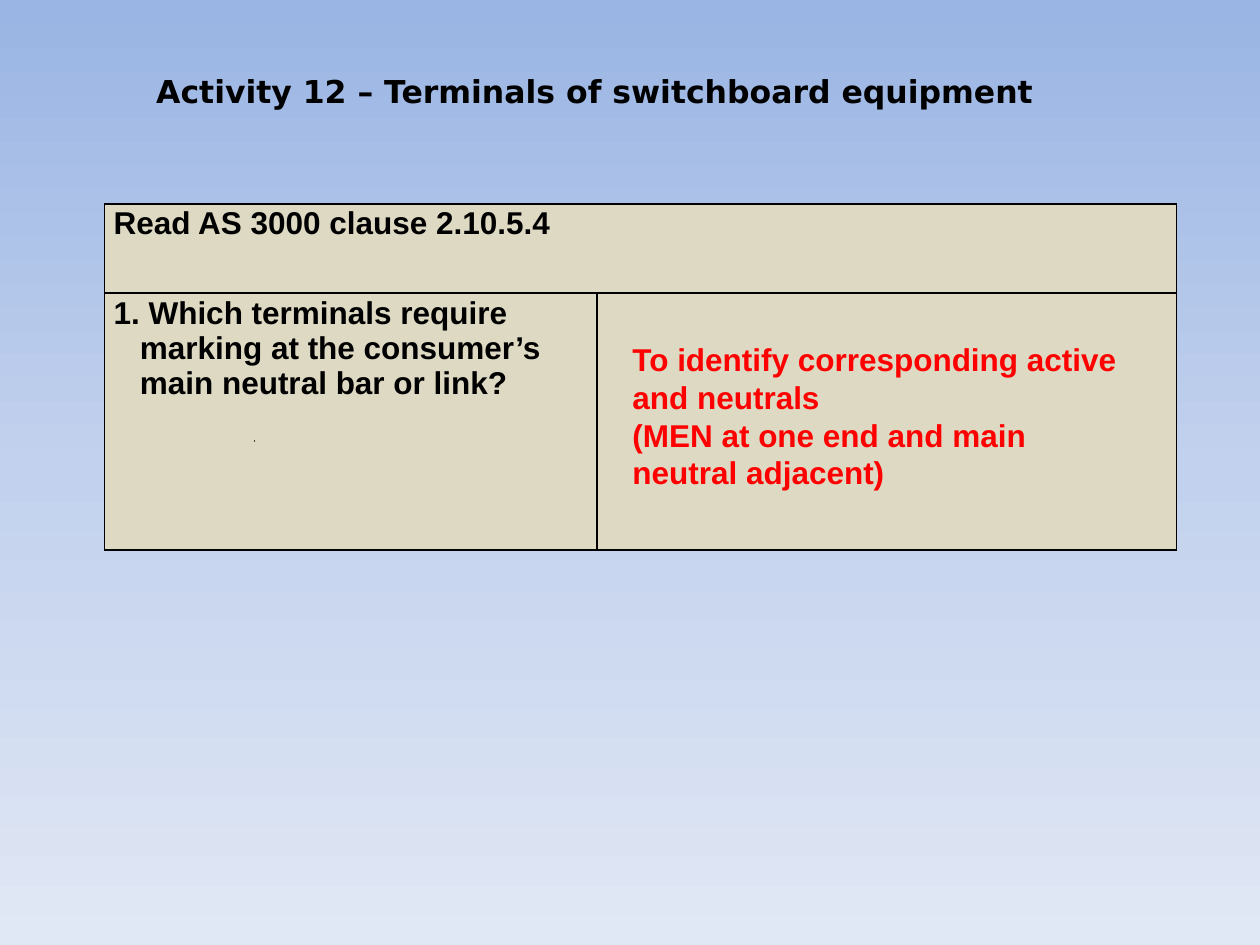
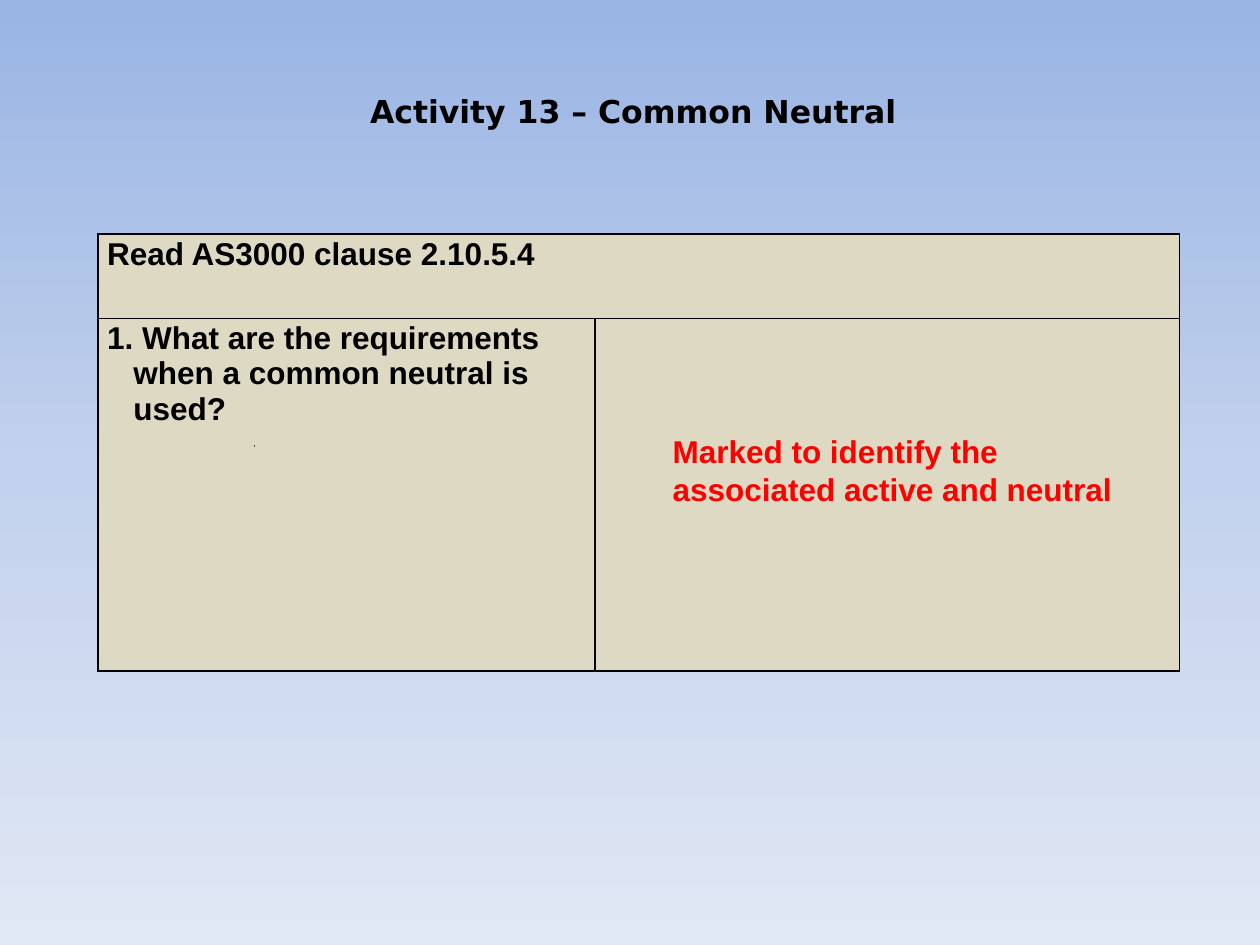
from copy import deepcopy

from pptx import Presentation
from pptx.dml.color import RGBColor
from pptx.enum.shapes import MSO_SHAPE
from pptx.oxml import parse_xml
from pptx.oxml.ns import nsdecls, qn
from pptx.util import Cm, Pt

BLACK, RED, BLUE, SAND = "000000", "FF0000", "4F81BD", "DDD9C3"
BACKGROUND_STOPS = [(0, "9AB5E4"), (0.5, "C2D1ED"), (1, "E1E8F5")]
TITLE_FONT, BODY_FONT = "DejaVu Sans", "Arial"
TEXT_SIZE = Pt(18)
HANGING_INDENT = Cm(0.53)

# Boxes are left, top, width, height in centimetres
ACTIVITIES = [
    {
        "title": "Activity 12 – Terminals of switchboard equipment",
        "title_box": (2.9, 1.32, 19.99, 1.02),
        "wrap_title": True,
        "reading": "Read AS 3000 clause 2.10.5.4",
        "question": "1. Which terminals require marking at the consumer’s "
                    "main neutral bar or link?",
        "table_box": (2.11, 4.11, 21.61, 6.98),
        "reading_height": 1.8,
        "marker_position": (5.13, 8.89),
        "answers": ["To identify corresponding active and neutrals",
                    "(MEN at one end and main neutral adjacent)"],
        "answer_box": (12.5, 6.73, 10.39, 3.33),
    },
    {
        "title": "Activity 13 – Common Neutral",
        "title_box": (7.21, 1.73, 11.33, 1.02),
        "wrap_title": False,
        "reading": "Read AS3000 clause 2.10.5.4",
        "question": "1. What are the requirements when a common neutral is used?",
        "table_box": (1.98, 4.72, 21.8, 8.81),
        "reading_height": 1.7,
        "marker_position": (5.13, 8.99),
        "answers": ["Marked to identify the associated active and neutral"],
        "answer_box": (13.31, 8.59, 9.6, 1.8),
    },
]
QUESTION_SHARE = 0.4594  # question column as a share of the table width


def color(hex_string):
    return RGBColor.from_string(hex_string)


def write(text_frame, lines, font_name, hex_string):
    """Write bold paragraphs in one font and colour."""
    text_frame.text = "\n".join(lines)
    for paragraph in text_frame.paragraphs:
        for run in paragraph.runs:
            run.font.name = font_name
            run.font.size = TEXT_SIZE
            run.font.bold = True
            run.font.color.rgb = color(hex_string)


def paint_background(slide):
    fill = slide.background.fill
    fill.gradient()
    fill.gradient_angle = 270
    stop_list = slide.element.find(".//" + qn("a:gsLst"))
    stop_list.append(deepcopy(stop_list[-1]))
    for stop, (position, hex_string) in zip(fill.gradient_stops, BACKGROUND_STOPS):
        stop.position = position
        stop.color.rgb = color(hex_string)


def add_text(slide, box, lines, font_name, hex_string, wrap=True):
    text_frame = slide.shapes.add_textbox(*map(Cm, box)).text_frame
    text_frame.word_wrap = wrap
    write(text_frame, lines, font_name, hex_string)


def style_cell(cell):
    cell.margin_left = cell.margin_right = Cm(0.18)
    cell.margin_top = cell.margin_bottom = Cm(0.05)
    cell.fill.solid()
    cell.fill.fore_color.rgb = color(SAND)
    # Borders come before the fill in the cell properties
    properties = cell._tc.get_or_add_tcPr()
    for index, side in enumerate(("lnL", "lnR", "lnT", "lnB")):
        properties.insert(index, parse_xml(
            f'<a:{side} {nsdecls("a")} w="{Pt(1)}"><a:solidFill>'
            f'<a:srgbClr val="{BLACK}"/></a:solidFill></a:{side}>'))


def add_question_table(slide, box, reading_height, reading, question):
    width, height = box[2:]
    table = slide.shapes.add_table(2, 2, *map(Cm, box)).table
    table.first_row = table.horz_banding = False
    question_width = width * QUESTION_SHARE
    table.columns[0].width = Cm(question_width)
    table.columns[1].width = Cm(width - question_width)
    table.rows[0].height = Cm(reading_height)
    table.rows[1].height = Cm(height - reading_height)
    for cell in table.iter_cells():
        style_cell(cell)
    table.cell(0, 0).merge(table.cell(0, 1))

    write(table.cell(0, 0).text_frame, [reading], BODY_FONT, BLACK)
    question_frame = table.cell(1, 0).text_frame
    write(question_frame, [question], BODY_FONT, BLACK)
    paragraph_properties = question_frame.paragraphs[0]._p.get_or_add_pPr()
    paragraph_properties.set("marL", str(HANGING_INDENT))
    paragraph_properties.set("indent", str(-HANGING_INDENT))


def add_marker(slide, position):
    """Add the tiny dot below the question."""
    left, top = map(Cm, position)
    marker = slide.shapes.add_shape(MSO_SHAPE.RECTANGLE, left, top, Cm(0), Cm(0))
    marker.shadow.inherit = False
    marker.fill.solid()
    marker.fill.fore_color.rgb = color(BLUE)
    marker.line.color.rgb = color(BLACK)
    marker.line.width = Pt(0.75)


def add_activity_slide(presentation, activity):
    slide = presentation.slides.add_slide(presentation.slide_layouts[6])
    paint_background(slide)
    add_question_table(slide, activity["table_box"], activity["reading_height"],
                       activity["reading"], activity["question"])
    add_marker(slide, activity["marker_position"])
    add_text(slide, activity["title_box"], [activity["title"]],
             TITLE_FONT, BLACK, activity["wrap_title"])
    add_text(slide, activity["answer_box"], activity["answers"], BODY_FONT, RED)


def main():
    presentation = Presentation()
    presentation.slide_width = Cm(25.4)
    presentation.slide_height = Cm(19.05)
    for activity in ACTIVITIES:
        add_activity_slide(presentation, activity)
    presentation.save("out.pptx")


if __name__ == "__main__":
    main()
